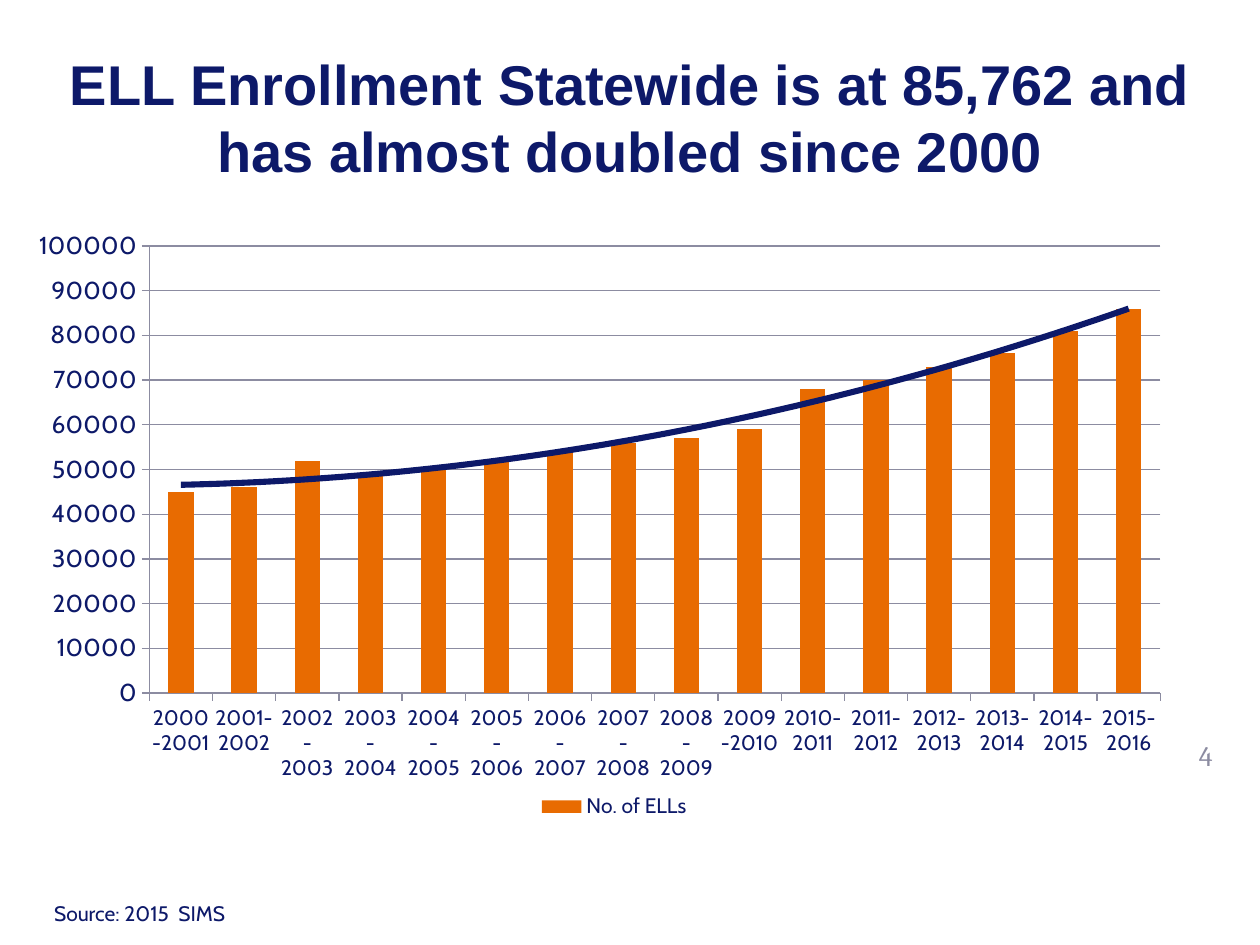
import pptx
import pptx.chart.data
import pptx.dml.color
import pptx.enum.chart
import pptx.enum.text
import pptx.oxml
import pptx.oxml.ns
import pptx.util
from pptx.util import Cm

NAVY, ORANGE, GREY = "0D1969", "E86B01", "8C8CA1"
FIRST_YEAR = 2000
ENROLLMENT = [45000, 46000, 52000, 49000, 50000, 52000, 54000, 56000,
              57000, 59000, 68000, 70000, 73000, 76000, 81000, 86000]


def color(hex_string):
    return pptx.dml.color.RGBColor.from_string(hex_string)


def style_font(font, name, size, hex_string, bold=False):
    font.name = name
    font.size = pptx.util.Pt(size)
    font.bold = bold
    font.color.rgb = color(hex_string)


def add_text(slide, box, text, font, centered=False):
    shape = slide.shapes.add_textbox(*box)
    frame = shape.text_frame
    frame.word_wrap = True
    paragraph = frame.paragraphs[0]
    if centered:
        frame.vertical_anchor = pptx.enum.text.MSO_ANCHOR.MIDDLE
        paragraph.alignment = pptx.enum.text.PP_ALIGN.CENTER
    run = paragraph.add_run()
    run.text = text
    style_font(run.font, *font)


def chart_xml(tag, content):
    namespaces = pptx.oxml.ns.nsdecls("c", "a")
    return pptx.oxml.parse_xml(f"<c:{tag} {namespaces}>{content}</c:{tag}>")


def manual_layout(x, y, width, height, inner=False):
    target = '<c:layoutTarget val="inner"/>' if inner else ""
    modes = '<c:xMode val="edge"/><c:yMode val="edge"/>'
    sizes = "".join(f'<c:{key} val="{value}"/>' for key, value in
                    zip("xywh", (x, y, width, height)))
    return chart_xml("layout", f"<c:manualLayout>{target}{modes}{sizes}</c:manualLayout>")


def remove_layout(element):
    for layout in element.findall(pptx.oxml.ns.qn("c:layout")):
        element.remove(layout)


def add_trend_line(series, hex_string, width):
    line = (f'<c:spPr><a:ln w="{pptx.util.Pt(width)}"><a:solidFill>'
            f'<a:srgbClr val="{hex_string}"/></a:solidFill></a:ln></c:spPr>')
    options = ('<c:trendlineType val="poly"/><c:order val="2"/>'
               '<c:dispRSqr val="0"/><c:dispEq val="0"/>')
    categories = series._element.find(pptx.oxml.ns.qn("c:cat"))
    categories.addprevious(chart_xml("trendline", line + options))


def style_axis(axis, size):
    style_font(axis.tick_labels.font, "Cabin", size, NAVY)
    axis.major_tick_mark = pptx.enum.chart.XL_TICK_MARK.OUTSIDE
    axis.minor_tick_mark = pptx.enum.chart.XL_TICK_MARK.NONE
    axis.format.line.color.rgb = color(GREY)


def add_legend(chart):
    chart.has_legend = True
    legend = chart.legend
    legend.position = pptx.enum.chart.XL_LEGEND_POSITION.BOTTOM
    legend.include_in_layout = False
    style_font(legend.font, "Cabin", 12, NAVY)
    # Only the columns are named, not the trend line
    remove_layout(legend._element)
    position = legend._element.find(pptx.oxml.ns.qn("c:legendPos"))
    position.addnext(manual_layout(0.43, 0.9, 0.14, 0.06))
    position.addnext(chart_xml("legendEntry", '<c:idx val="1"/><c:delete val="1"/>'))


def add_enrollment_chart(slide, box):
    data = pptx.chart.data.CategoryChartData()
    data.categories = [f"{year}-{year + 1}" for year in
                       range(FIRST_YEAR, FIRST_YEAR + len(ENROLLMENT))]
    data.add_series("No. of ELLs", ENROLLMENT)
    chart = slide.shapes.add_chart(
        pptx.enum.chart.XL_CHART_TYPE.COLUMN_CLUSTERED, *box, data).chart
    chart.has_title = False
    style_font(chart.font, "Cabin", 18, NAVY)

    # Columns and trend
    plot = chart.plots[0]
    plot.vary_by_categories = False
    plot.gap_width = 150
    series = plot.series[0]
    series.format.fill.solid()
    series.format.fill.fore_color.rgb = color(ORANGE)
    add_trend_line(series, NAVY, 3.5)

    # Axes
    style_axis(chart.category_axis, 12)
    value_axis = chart.value_axis
    style_axis(value_axis, 14)
    value_axis.minimum_scale, value_axis.maximum_scale = 0, 100000
    value_axis.major_unit = 10000
    value_axis.has_major_gridlines = True
    value_axis.major_gridlines.format.line.color.rgb = color(GREY)
    value_axis.tick_labels.number_format = "General"
    value_axis.tick_labels.number_format_is_linked = False

    # Plot area and legend places
    plot_area = chart._chartSpace.chart.plotArea
    remove_layout(plot_area)
    plot_area.insert(0, manual_layout(0.1, 0.04, 0.86, 0.71, inner=True))
    add_legend(chart)


def main():
    presentation = pptx.Presentation()
    presentation.slide_width, presentation.slide_height = Cm(25.4), Cm(19.05)
    slide = presentation.slides.add_slide(presentation.slide_layouts[6])

    # Title
    add_text(slide, (Cm(0.64), Cm(0.76), Cm(24.13), Cm(3.18)),
             "ELL Enrollment Statewide is at 85,762 and has almost doubled since 2000",
             ("Arial", 32, NAVY, True), centered=True)
    # Source and page number
    add_text(slide, (Cm(0.84), Cm(18.03), Cm(12.5), Cm(0.76)),
             "Source: 2015  SIMS", ("Cabin", 12, NAVY))
    add_text(slide, (Cm(23.57), Cm(14.6), Cm(1.47), Cm(1.27)),
             "4", ("Cambria", 16, GREY), centered=True)
    # Chart
    add_enrollment_chart(slide, (Cm(0.64), Cm(4.45), Cm(23.7), Cm(12.7)))

    presentation.save("out.pptx")


if __name__ == "__main__":
    main()
